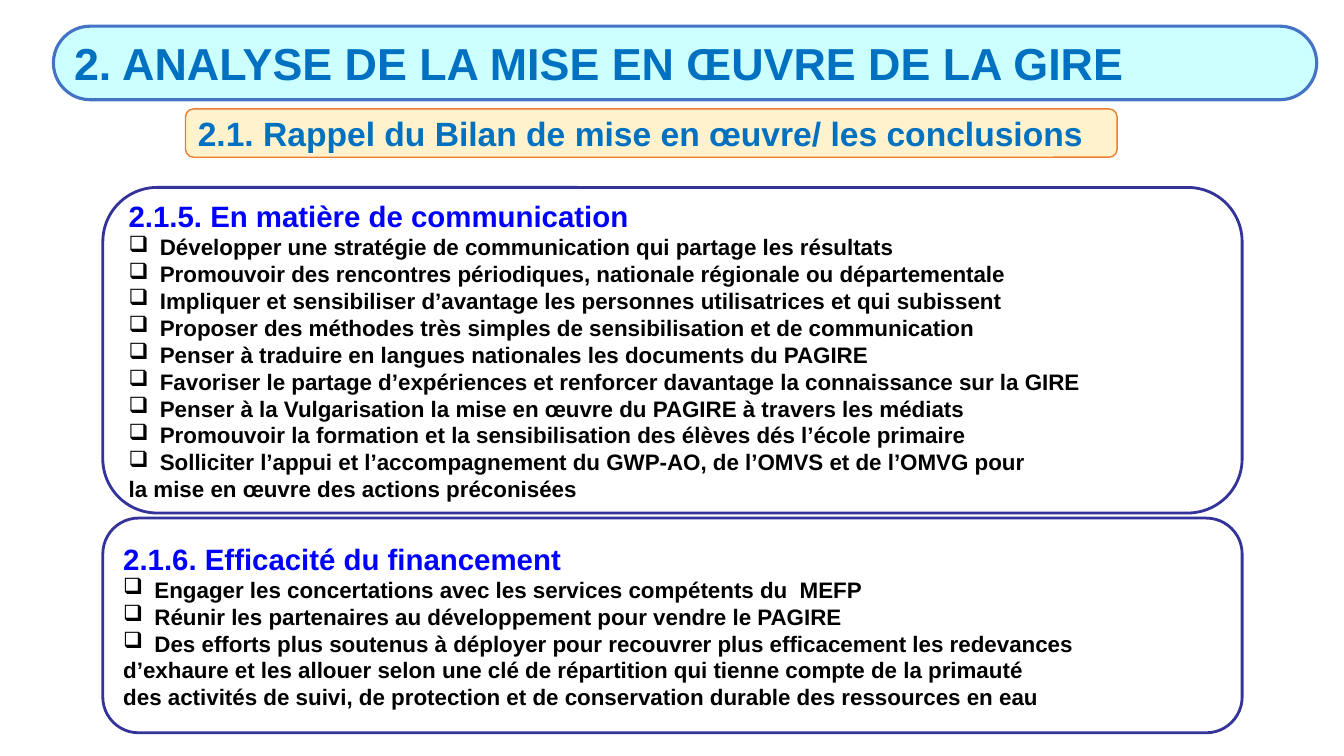
"""Build the slide on the conclusions of the GIRE review."""
from lxml import etree
from pptx import Presentation
from pptx import util as u
from pptx.dml.color import RGBColor
from pptx.enum import shapes, text
from pptx.oxml import ns

CYAN = RGBColor(0xCC, 0xFF, 0xFF)
CREAM = RGBColor(0xFF, 0xF2, 0xCC)
WHITE = RGBColor(0xFF, 0xFF, 0xFF)
BLACK = RGBColor(0, 0, 0)
STEEL = RGBColor(0x44, 0x72, 0xC4)
ORANGE = RGBColor(0xED, 0x7D, 0x31)
NAVY = RGBColor(0x33, 0x33, 0x99)
TITLE_BLUE = RGBColor(0x00, 0x70, 0xC0)
HEAD_BLUE = RGBColor(0, 0, 0xFF)

COMMUNICATION = [
    "Développer une stratégie de communication qui partage les résultats",
    "Promouvoir des rencontres périodiques, nationale régionale ou départementale",
    "Impliquer et sensibiliser d’avantage les personnes utilisatrices et qui subissent",
    "Proposer des méthodes très simples de sensibilisation et de communication",
    "Penser à traduire en langues nationales les documents du PAGIRE",
    "Favoriser le partage d’expériences et renforcer davantage la connaissance sur la GIRE",
    "Penser à la Vulgarisation la mise en œuvre du PAGIRE à travers les médiats",
    "Promouvoir la formation et la sensibilisation des élèves dés l’école primaire",
    "Solliciter l’appui et l’accompagnement du GWP-AO, de l’OMVS et de l’OMVG pour",
]
FINANCING = [
    "Engager les concertations avec les services compétents du  MEFP",
    "Réunir les partenaires au développement pour vendre le PAGIRE",
    "Des efforts plus soutenus à déployer pour recouvrer plus efficacement les redevances",
]


def add_text(p, words, size, color, bullet=None):
    """Write one formatted run, with an optional hanging bullet."""
    p.alignment = text.PP_ALIGN.LEFT
    r = p.add_run()
    r.text = words
    r.font.name, r.font.size, r.font.bold = "Arial", u.Pt(size), True
    r.font.color.rgb = color
    if bullet:
        pPr = p._p.get_or_add_pPr()
        pPr.set("marL", str(u.Inches(0.31)))
        pPr.set("indent", str(-u.Inches(0.31)))
        etree.SubElement(pPr, ns.qn("a:buChar")).set("char", bullet)


class Deck:
    """Hold the style and the current slide."""

    def __init__(self, prs):
        """Add a blank slide."""
        self.s = prs.slides.add_slide(prs.slide_layouts[6])
        self.bullet = "❑"
        self.head_size, self.body_size = 21, 16

    def box(self, at, fill, line, width, corner=0.1667):
        """Add a rounded box and return its text frame."""
        sp = self.s.shapes.add_shape(
            shapes.MSO_SHAPE.ROUNDED_RECTANGLE, *map(u.Inches, at))
        sp.adjustments[0] = corner
        sp.shadow.inherit = False
        sp.fill.solid()
        sp.fill.fore_color.rgb = fill
        sp.line.color.rgb = line
        sp.line.width = u.Pt(width)
        tf = sp.text_frame
        tf.word_wrap = True
        tf.vertical_anchor = text.MSO_ANCHOR.MIDDLE
        tf.margin_top = tf.margin_bottom = 0
        return tf

    def banner(self, at, words, size, **style):
        """Add a box with one line of title text."""
        tf = self.box(at, **style)
        add_text(tf.paragraphs[0], words, size, TITLE_BLUE)

    def panel(self, top, height, heading, items, closing):
        """Add a panel with a heading, bullets and closing lines."""
        tf = self.box((1.02, top, 11.3, height), WHITE, NAVY, 2)
        add_text(tf.paragraphs[0], heading, self.head_size, HEAD_BLUE)
        for item in items:
            add_text(tf.add_paragraph(), item, self.body_size, BLACK, self.bullet)
        for words in closing:
            add_text(tf.add_paragraph(), words, self.body_size, BLACK)


def main():
    """Build and save the slide."""
    prs = Presentation()
    prs.slide_width, prs.slide_height = u.Inches(13.33), u.Inches(7.5)
    deck = Deck(prs)
    deck.banner((0.53, 0.26, 12.53, 0.73),
                "2. ANALYSE DE LA MISE EN ŒUVRE DE LA GIRE", 32,
                fill=CYAN, line=STEEL, width=2.25, corner=0.5)
    deck.banner((1.84, 1.08, 9.24, 0.48),
                "2.1. Rappel du Bilan de mise en œuvre/ les conclusions", 24,
                fill=CREAM, line=ORANGE, width=1)
    deck.panel(5.14, 2.13, "2.1.6. Efficacité du financement", FINANCING, [
        "d’exhaure et les allouer selon une clé de répartition qui tienne compte de la primauté",
        "des activités de suivi, de protection et de conservation durable des ressources en eau"])
    deck.panel(1.86, 3.23, "2.1.5. En matière de communication", COMMUNICATION,
               ["la mise en œuvre des actions préconisées"])
    prs.save("out.pptx")


if __name__ == "__main__":
    main()
